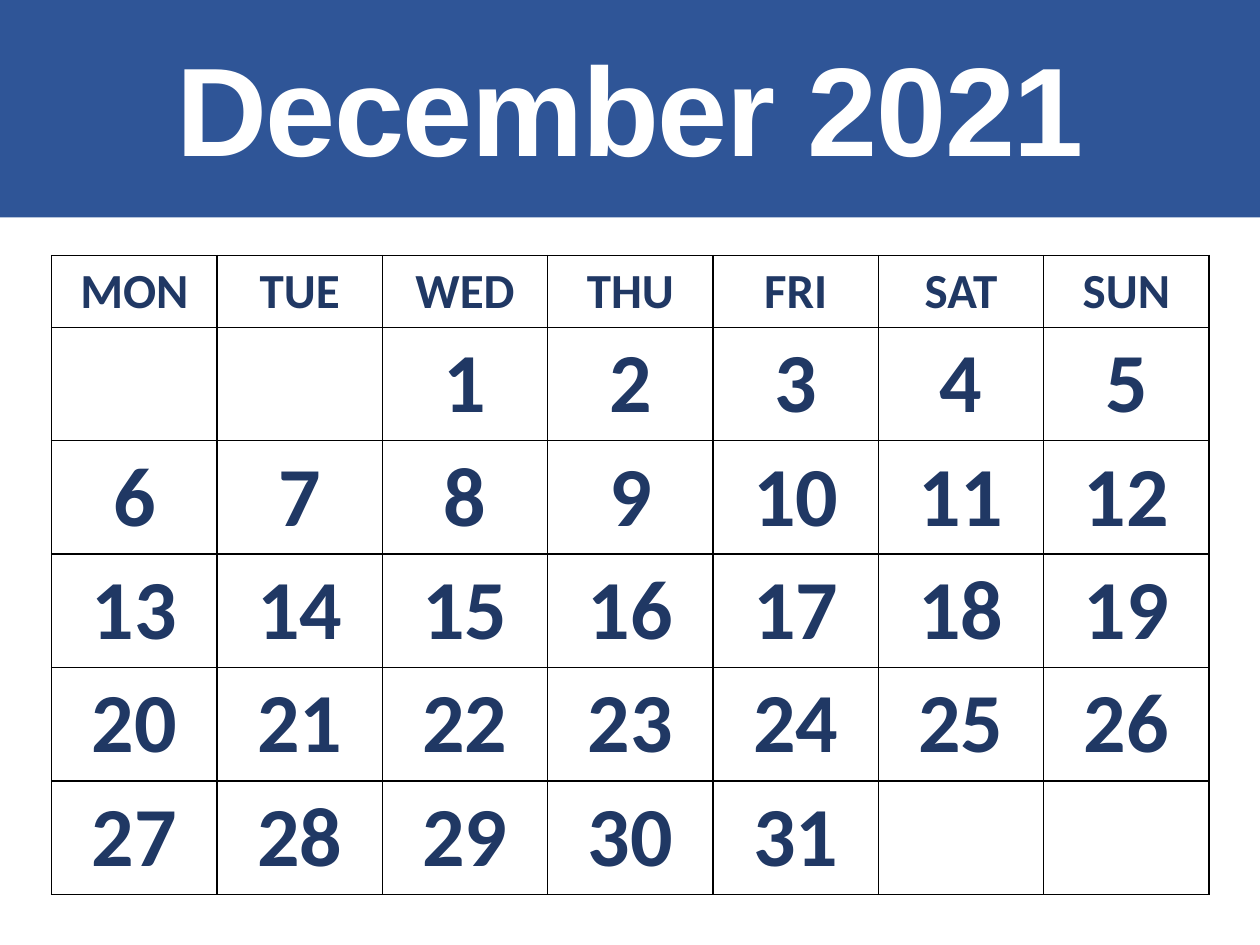
"""Build a one-page wall calendar for December 2021."""
import dataclasses

import lxml.etree
import pptx
import pptx.dml.color
import pptx.enum.text
import pptx.oxml.ns
import pptx.util

Pt = pptx.util.Pt
WEEKDAYS = ["MON", "TUE", "WED", "THU", "FRI", "SAT", "SUN"]
WEEKS = 5
BLANK_DAYS = 2
LAST_DAY = 31


@dataclasses.dataclass(frozen=True)
class Theme:
    banner: str = "2F5597"
    title: str = "FFFFFF"
    day: str = "203864"
    border: str = "000000"
    title_font: str = "Arial"
    day_font: str = "Calibri"
    title_size: int = 72
    weekday_size: int = 28
    day_size: int = 48


THEME = Theme()


def rgb(color):
    return pptx.dml.color.RGBColor.from_string(color)


def write_text(frame, text, *, font, size, color, line_spacing=None, tracking=0):
    para = frame.paragraphs[0]
    para.alignment = pptx.enum.text.PP_ALIGN.CENTER
    para.line_spacing = line_spacing
    span = para.add_run()
    span.text = text
    span.font.name = font
    span.font.size = Pt(size)
    span.font.bold = True
    span.font.color.rgb = rgb(color)
    if tracking:
        span._r.get_or_add_rPr().set("spc", str(round(tracking * 100)))


def add_banner(page, text, width, height):
    box = page.shapes.title
    box.left, box.top, box.width, box.height = Pt(0), Pt(0), Pt(width), Pt(height)
    box.fill.solid()
    box.fill.fore_color.rgb = rgb(THEME.banner)
    frame = box.text_frame
    frame.auto_size = pptx.enum.text.MSO_AUTO_SIZE.NONE
    frame.vertical_anchor = pptx.enum.text.MSO_ANCHOR.MIDDLE
    frame.margin_left = frame.margin_right = frame.margin_bottom = Pt(0)
    frame.margin_top = Pt(7.5)
    write_text(frame, text, font=THEME.title_font, size=THEME.title_size,
               color=THEME.title, line_spacing=0.9, tracking=-0.8)


def border_cell(cell, color, width):
    properties = cell._tc.get_or_add_tcPr()
    qn = pptx.oxml.ns.qn
    for index, side in enumerate(("lnL", "lnR", "lnT", "lnB")):
        line = lxml.etree.Element(qn(f"a:{side}"), w=str(Pt(width)))
        fill = lxml.etree.SubElement(line, qn("a:solidFill"))
        lxml.etree.SubElement(fill, qn("a:srgbClr"), val=color)
        properties.insert(index, line)


def fill_cell(cell, text, size):
    cell.fill.background()
    border_cell(cell, THEME.border, 1)
    cell.vertical_anchor = pptx.enum.text.MSO_ANCHOR.MIDDLE
    cell.margin_top = cell.margin_bottom = Pt(3)
    if text:
        write_text(cell.text_frame, text, font=THEME.day_font, size=size, color=THEME.day)


def month_rows():
    slots = range(1 - BLANK_DAYS, 1 - BLANK_DAYS + WEEKS * len(WEEKDAYS))
    days = [str(day) if 1 <= day <= LAST_DAY else "" for day in slots]
    step = len(WEEKDAYS)
    return [WEEKDAYS] + [days[start:start + step] for start in range(0, len(days), step)]


def add_calendar(page, left, top, column_width, header_height, week_height):
    rows = month_rows()
    table = page.shapes.add_table(
        len(rows), len(WEEKDAYS), Pt(left), Pt(top),
        Pt(column_width * len(WEEKDAYS)), Pt(header_height + week_height * WEEKS)).table
    table.first_row = table.horz_banding = False
    for column in table.columns:
        column.width = Pt(column_width)
    for index, texts in enumerate(rows):
        table.rows[index].height = Pt(week_height if index else header_height)
        size = THEME.day_size if index else THEME.weekday_size
        for column, text in enumerate(texts):
            fill_cell(table.cell(index, column), text, size)


def main():
    deck = pptx.Presentation()
    deck.slide_width, deck.slide_height = Pt(720), Pt(540)
    page = deck.slides.add_slide(deck.slide_layouts.get_by_name("Title Only"))
    add_banner(page, "December 2021", 720, 124.2)
    add_calendar(page, left=29.5, top=146, column_width=94.5,
                 header_height=41, week_height=64.8)
    deck.save("out.pptx")


if __name__ == "__main__":
    main()
